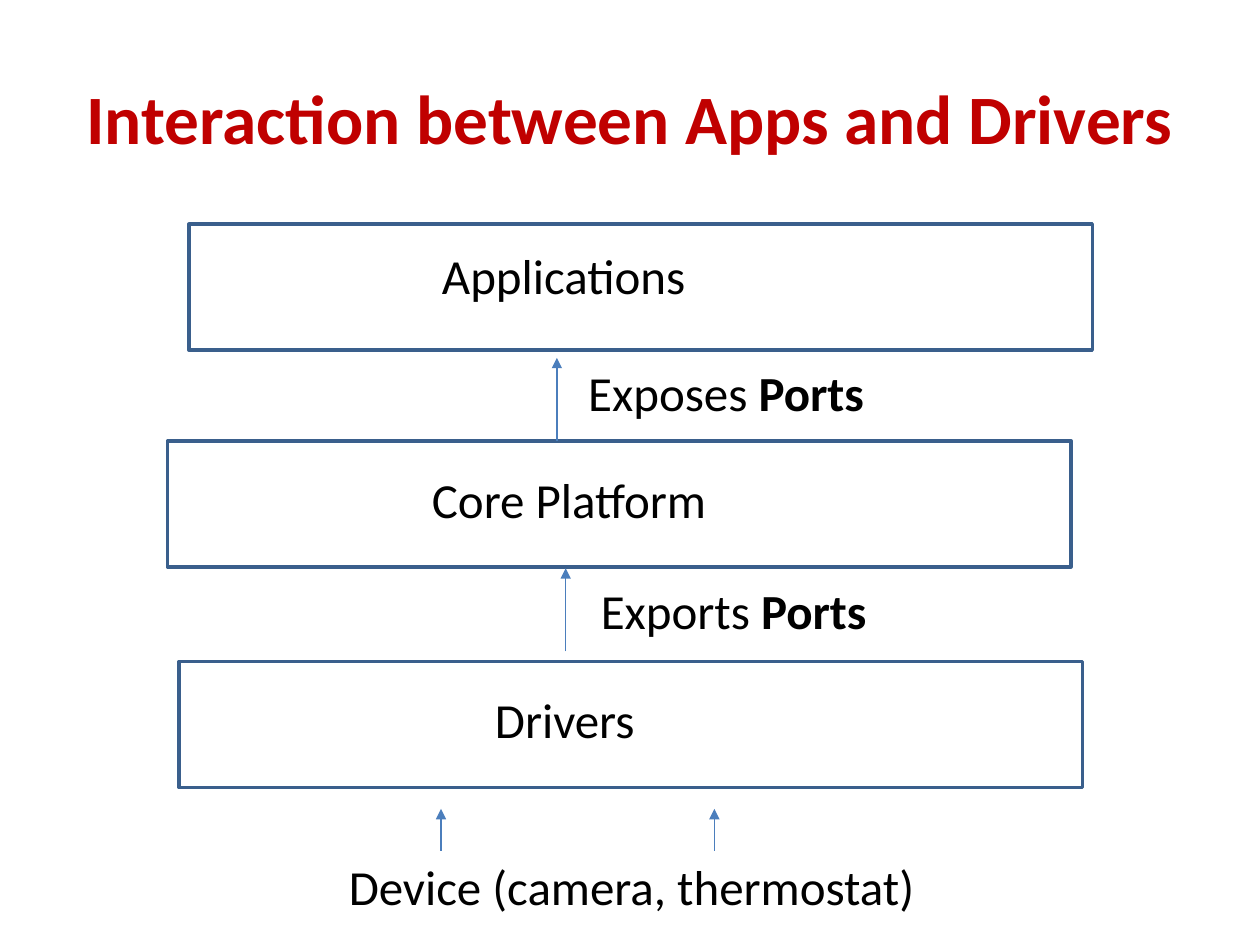
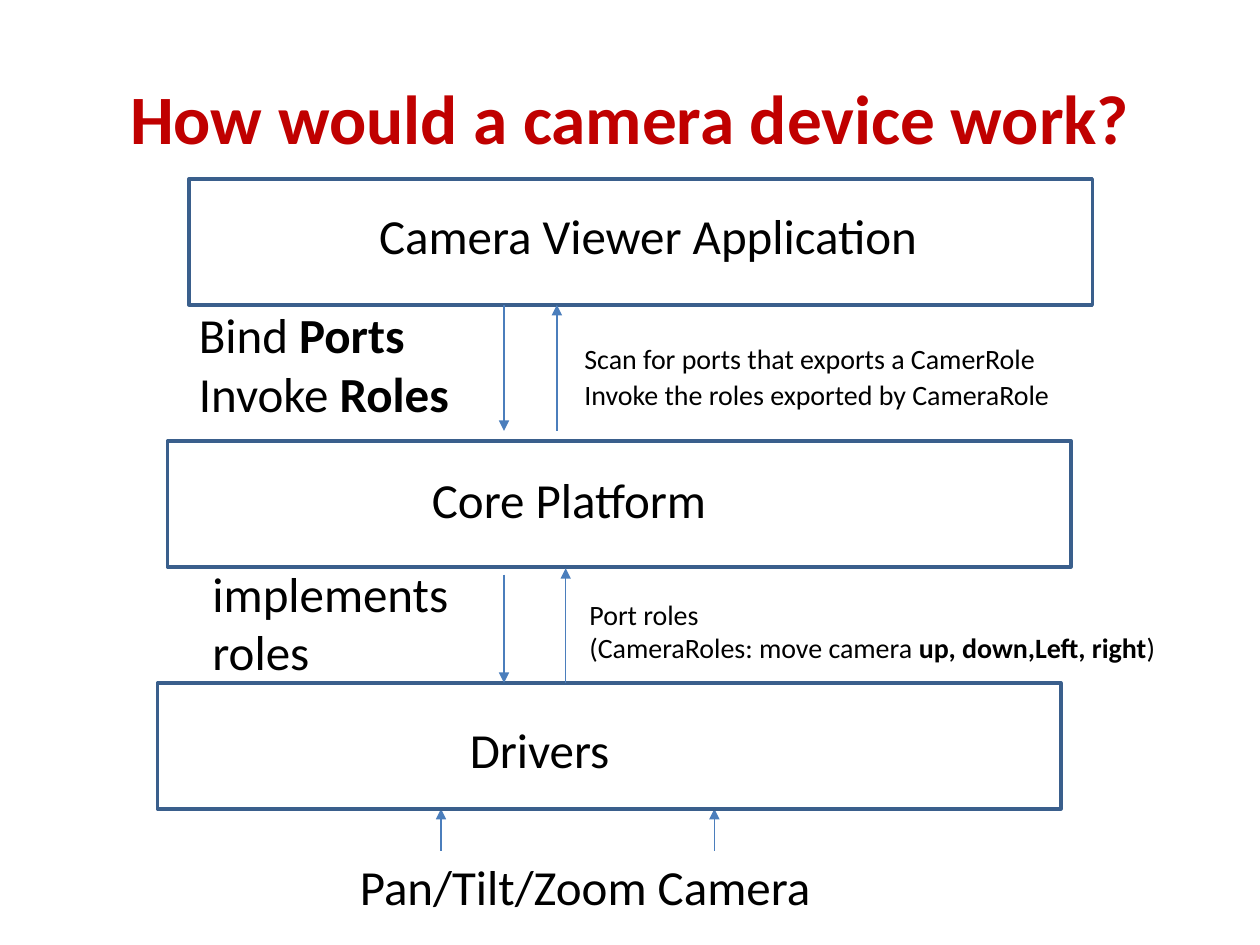
import pptx
import pptx.dml.color
import pptx.enum.dml
import pptx.enum.shapes
import pptx.enum.text
import pptx.oxml
import pptx.oxml.ns
import pptx.util
from pptx.util import Inches

FONT = "Calibri"
RED, BLACK = "C00000", "000000"
EDGE, ARROW = "3A5F8C", "4B7EBC"
BOX_W, BOX_H = 7.17, 1
BIG, SMALL = 28, 16


def paint(color, code):
    color.rgb = pptx.dml.color.RGBColor.from_string(code)


def write(par, text, size, code):
    """Add text run by run; parts between asterisks are bold."""
    for i, part in enumerate(text.split("*")):
        if part:
            run = par.add_run()
            run.text = part
            run.font.name = FONT
            run.font.size = pptx.util.Pt(size)
            run.font.bold = i % 2 == 1
            paint(run.font.color, code)


def start(deck, title):
    slide = deck.slides.add_slide(deck.slide_layouts[5])
    head = slide.shapes.title
    head.left, head.top = Inches(0.5), Inches(0.3)
    head.width, head.height = Inches(9), Inches(1.25)
    frame = head.text_frame
    frame.vertical_anchor = pptx.enum.text.MSO_ANCHOR.MIDDLE
    par = frame.paragraphs[0]
    par.alignment = pptx.enum.text.PP_ALIGN.CENTER
    write(par, f"*{title}*", 39.6, RED)
    return slide


def label(slide, x, y, w, h, lines, size=BIG, indent=0):
    box = slide.shapes.add_textbox(Inches(x), Inches(y), Inches(w), Inches(h))
    frame = box.text_frame
    frame.word_wrap = False
    frame.auto_size = pptx.enum.text.MSO_AUTO_SIZE.SHAPE_TO_FIT_TEXT
    for i, line in enumerate(lines):
        par = frame.add_paragraph() if i else frame.paragraphs[0]
        if indent:
            par.level = 1
            props = par._p.get_or_add_pPr()
            props.set("marL", str(Inches(indent)))
            props.set("indent", "0")
        write(par, line, size, BLACK)


def layer(slide, x, y):
    """Outline one layer of the stack."""
    box = slide.shapes.add_shape(pptx.enum.shapes.MSO_SHAPE.RECTANGLE,
                                 Inches(x), Inches(y), Inches(BOX_W), Inches(BOX_H))
    box.shadow.inherit = False
    box.fill.background()
    paint(box.line.color, EDGE)
    box.line.width = pptx.util.Pt(2)


def arrow(slide, x, tail, tip):
    """Draw an upright arrow at x from tail to tip."""
    line = slide.shapes.add_connector(pptx.enum.shapes.MSO_CONNECTOR.STRAIGHT,
                                      Inches(x), Inches(tail), Inches(x), Inches(tip))
    paint(line.line.color, ARROW)
    line.line.width = pptx.util.Pt(0.75)
    ns = pptx.oxml.ns.nsdecls("a")
    line.line._get_or_add_ln().append(
        pptx.oxml.parse_xml(f'<a:tailEnd {ns} type="triangle"/>'))
    line._element.spPr.append(pptx.oxml.parse_xml(f"<a:effectLst {ns}/>"))


def core(slide):
    """Add the core layer and the device arrows, the same on each slide."""
    layer(slide, 1.33, 3.5)
    label(slide, 3.33, 3.68, 2.41, 0.57, ["Core Platform"])
    for x in (3.5, 5.67):
        arrow(slide, x, 6.75, 6.42)


def ports(deck):
    slide = start(deck, "Interaction between Apps and Drivers")
    core(slide)
    layer(slide, 1.5, 1.78)
    layer(slide, 1.42, 5.25)
    arrow(slide, 4.42, 3.5, 2.84)
    arrow(slide, 4.49, 5.17, 4.51)
    label(slide, 3.41, 1.9, 2.16, 0.57, ["Applications"])
    label(slide, 4.57, 2.83, 2.41, 0.57, ["Exposes *Ports*"])
    label(slide, 4.67, 4.56, 2.31, 0.57, ["Exports *Ports*"])
    label(slide, 3.83, 5.42, 1.32, 0.57, ["Drivers"])
    label(slide, 2.67, 6.75, 4.73, 0.57, ["Device (camera, thermostat)"])


def camera(deck):
    slide = start(deck, "How would a camera device work?")
    core(slide)
    layer(slide, 1.5, 1.42)
    layer(slide, 1.25, 5.42)
    arrow(slide, 4, 2.42, 3.42)
    arrow(slide, 4.42, 3.42, 2.42)
    arrow(slide, 4, 4.56, 5.42)
    arrow(slide, 4.49, 5.42, 4.51)
    label(slide, 2.91, 1.58, 4.52, 0.57, ["Camera Viewer Application"])
    label(slide, 1.48, 2.37, 2.25, 1.04, ["Bind *Ports*", "Invoke* Roles*"])
    label(slide, 4.54, 2.66, 3.83, 0.37,
          ["Scan for ports that exports a CamerRole"], SMALL)
    label(slide, 4.54, 2.95, 3.94, 0.37,
          ["Invoke the roles exported by CameraRole"], SMALL)
    label(slide, 1.5, 4.42, 2.18, 1.04, [" implements", " roles"])
    label(slide, 4.08, 4.69, 5.21, 0.64,
          ["Port roles", "(CameraRoles: move camera *up, down,Left, right*)"],
          SMALL, indent=0.5)
    label(slide, 3.63, 5.66, 1.32, 0.57, ["Drivers"])
    label(slide, 2.67, 6.75, 3.9, 0.57, [" Pan/Tilt/Zoom Camera"])


def main():
    deck = pptx.Presentation()
    deck.slide_width, deck.slide_height = Inches(10), Inches(7.5)
    ports(deck)
    camera(deck)
    deck.save("out.pptx")


if __name__ == "__main__":
    main()
